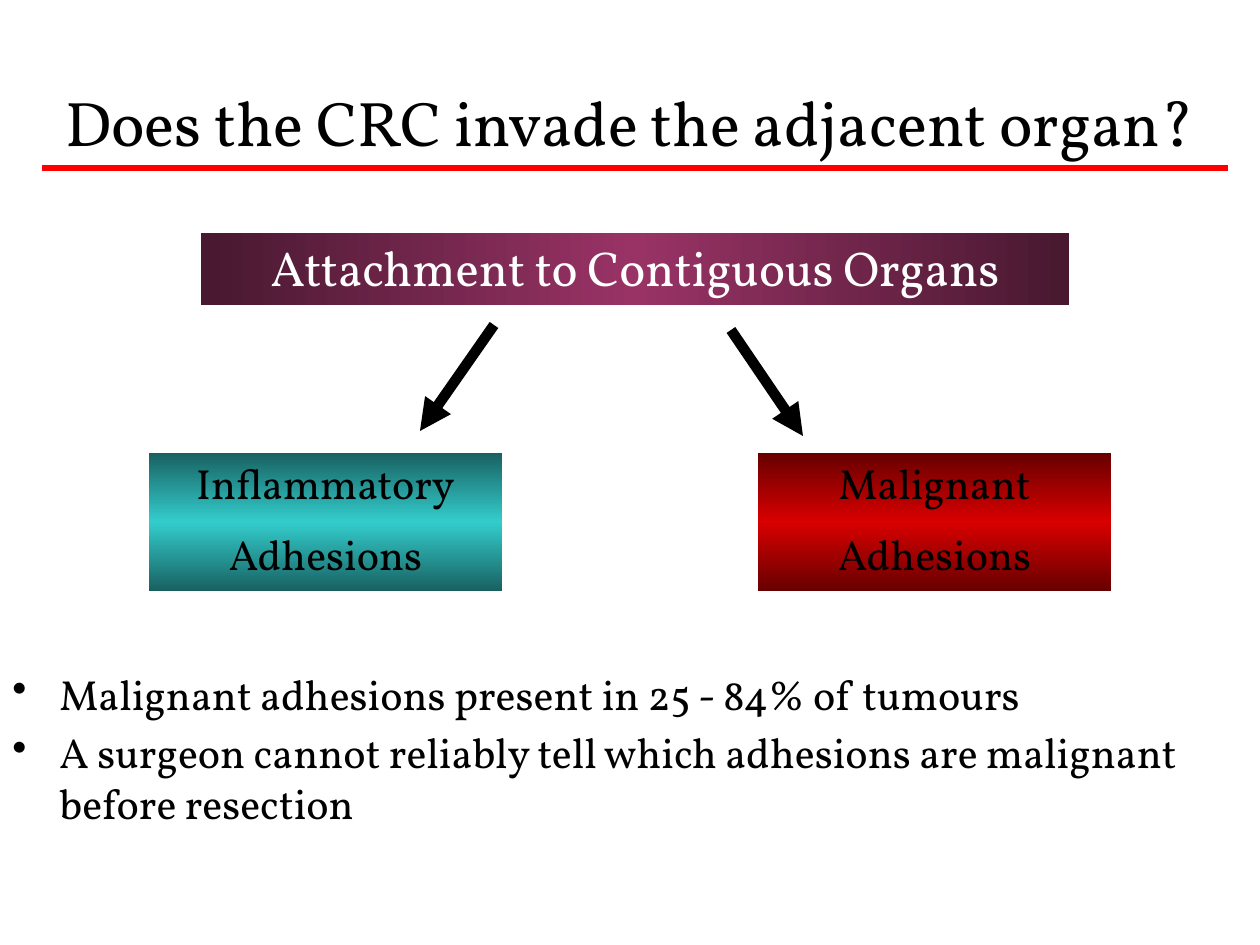
import copy
import pptx
import pptx.util
import pptx.dml.color
import pptx.enum.shapes
import pptx.enum.text
import pptx.oxml.ns
import lxml.etree

PX = 914400 // 126
FONT = "Vollkorn"
COLORS = {
    "black": "000000", "white": "FFFFFF", "rule": "FF0000",
    "plum": "993366", "plum_dark": "47182F",
    "teal": "33CCCC", "teal_dark": "185E5E",
    "red": "D80000", "red_dark": "640000",
}
ALIGN = pptx.enum.text.PP_ALIGN
ANCHOR = pptx.enum.text.MSO_ANCHOR
AUTO_SIZE = pptx.enum.text.MSO_AUTO_SIZE


def color(name):
    return pptx.dml.color.RGBColor.from_string(COLORS[name])


def write(shape, lines, size, text_color, align, gap=0, bullet_indent=0, **frame_format):
    frame = shape.text_frame
    for name, value in {"word_wrap": True, **frame_format}.items():
        setattr(frame, name, value)
    for index, line in enumerate(lines):
        paragraph = frame.paragraphs[0] if index == 0 else frame.add_paragraph()
        if bullet_indent:
            properties = paragraph._p.get_or_add_pPr()
            properties.set("marL", str(bullet_indent * PX))
            properties.set("indent", str(-bullet_indent * PX))
            lxml.etree.SubElement(properties, pptx.oxml.ns.qn("a:buChar")).set("char", "•")
        paragraph.alignment = align
        paragraph.space_before = pptx.util.Pt(gap if index else 0)
        run = paragraph.add_run()
        run.text = line
        for name, value in {"name": FONT, "size": pptx.util.Pt(size)}.items():
            setattr(run.font, name, value)
        run.font.color.rgb = color(text_color)


presentation = pptx.Presentation()
presentation.slide_width = pptx.util.Inches(10)
presentation.slide_height = pptx.util.Inches(7.5)
slide = presentation.slides.add_slide(presentation.slide_layouts[6])

findings = slide.shapes.add_textbox(0, 662 * PX, 1260 * PX, 116 * PX)
write(findings, [
    "Malignant adhesions present in 25 - 84% of tumours",
    "A surgeon cannot reliably tell which adhesions are malignant before resection",
], 24, "black", ALIGN.LEFT, gap=4.8, bullet_indent=47)

boxes = [
    ((199, 231, 872, 76), "plum", 0, ["Attachment to Contiguous Organs"], 28, "white"),
    ((147, 451, 357, 142), "teal", 90, ["Inflammatory", "Adhesions"], 24, "black"),
    ((756, 451, 357, 142), "red", 90, ["Malignant", "Adhesions"], 24, "black"),
]
for bounds, hue, angle, lines, size, text_color in boxes:
    shape = slide.shapes.add_shape(
        pptx.enum.shapes.MSO_SHAPE.RECTANGLE, *(length * PX for length in bounds))
    shape.shadow.inherit = False
    shape.fill.gradient()
    shape.fill.gradient_angle = angle
    first_stop = shape.fill.gradient_stops[0]._gs
    first_stop.addnext(copy.deepcopy(first_stop))
    stops = [(0, hue + "_dark"), (0.5, hue), (1, hue + "_dark")]
    for stop, (position, stop_color) in zip(shape.fill.gradient_stops, stops):
        stop.position = position
        stop.color.rgb = color(stop_color)
    shape.line.color.rgb = color("white")
    shape.line.width = pptx.util.Pt(2)
    write(shape, lines, size, text_color, ALIGN.CENTER, gap=size / 2,
          vertical_anchor=ANCHOR.TOP, auto_size=AUTO_SIZE.SHAPE_TO_FIT_TEXT)

title = slide.shapes.add_textbox(0, 42 * PX, 1260 * PX, 158 * PX)
write(title, ["Does the CRC invade the adjacent organ?"], 36, "black", ALIGN.CENTER,
      vertical_anchor=ANCHOR.MIDDLE)

lines = [
    ((494, 325, 420, 431), "black", 6, True),
    ((731, 330, 803, 436), "black", 6, True),
    ((42, 168, 1228, 168), "rule", 3, False),
]
for ends, line_color, width, has_arrowhead in lines:
    connector = slide.shapes.add_connector(
        pptx.enum.shapes.MSO_CONNECTOR.STRAIGHT, *(length * PX for length in ends))
    connector.line.color.rgb = color(line_color)
    connector.line.width = pptx.util.Pt(width)
    if has_arrowhead:
        outline = connector.line._get_or_add_ln()
        lxml.etree.SubElement(outline, pptx.oxml.ns.qn("a:tailEnd")).set("type", "triangle")
    lxml.etree.SubElement(connector._element.spPr, pptx.oxml.ns.qn("a:effectLst"))

presentation.save("out.pptx")
